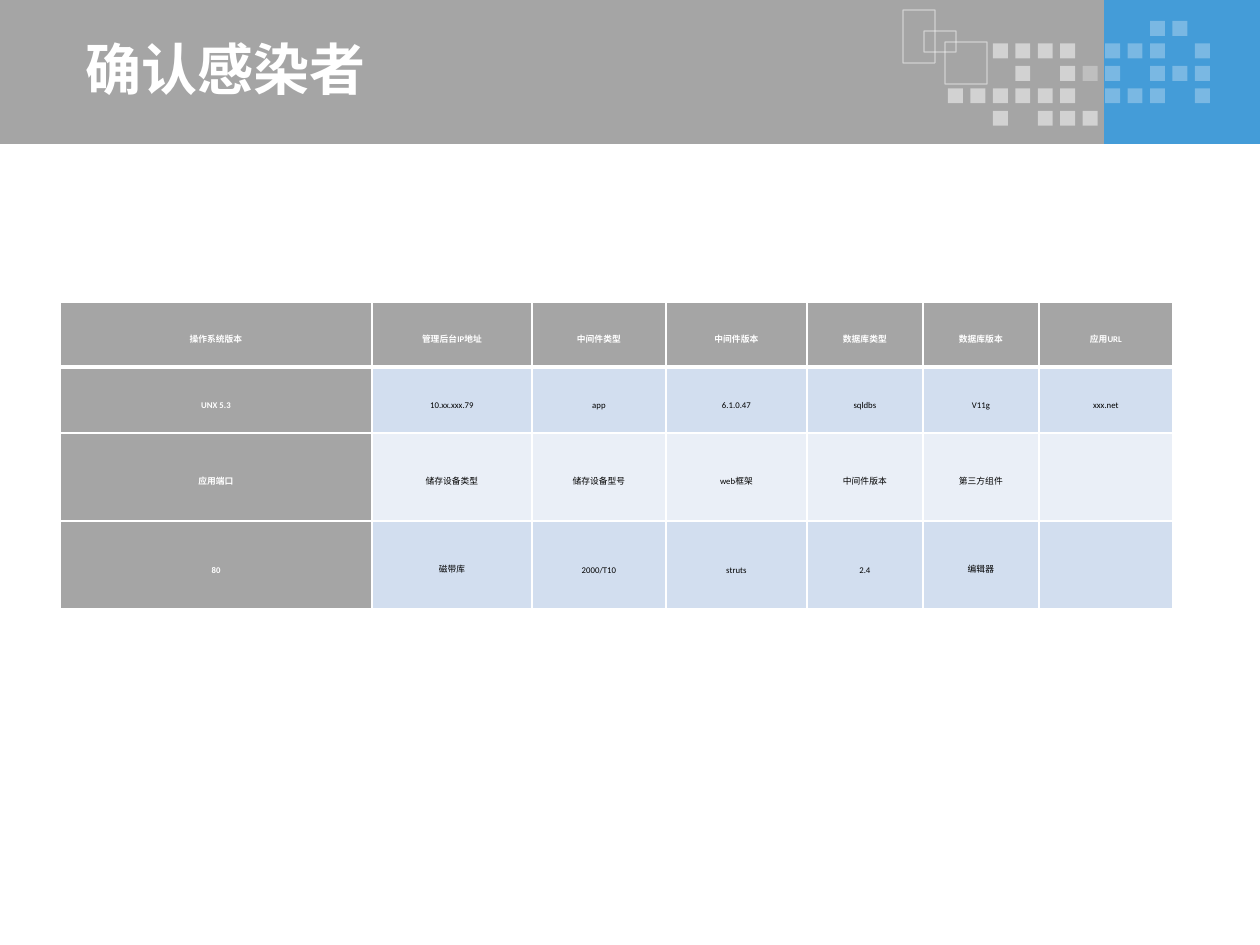
from lxml import etree
from pptx import Presentation
from pptx import util as u
from pptx.dml.color import RGBColor
from pptx.enum import shapes, text
from pptx.oxml import ns

SCALE = 914400 / 126  # EMU in one px
COLORS = {"gray": "A5A5A5", "blue": "449CD8", "white": "FFFFFF", "black": "000000",
          "odd row": "D2DEEF", "even row": "EAEFF7"}
CJK_FONT = "Noto Sans CJK SC"

# Content
TITLE = "确认感染者"
ROWS = [
    ["操作系统版本", "管理后台IP地址", "中间件类型", "中间件版本", "数据库类型", "数据库版本", "应用URL"],
    ["UNX 5.3", "10.xx.xxx.79", "app", "6.1.0.47", "sqldbs", "V11g", "xxx.net"],
    ["应用端口", "储存设备类型", "储存设备型号", "web框架", "中间件版本", "第三方组件", ""],
    ["80", "磁带库", "2000/T10", "struts", "2.4", "编辑器", ""],
]
COLUMN_WIDTHS = [312, 160, 134, 141, 116, 116, 134]
ROW_HEIGHTS = [65, 66, 88, 88]

# Header decoration: "#" is a strong square, "+" a faint one
BANDS = [("blue", 1104, 156), ("gray", 0, 1104)]
BAND_HEIGHT = 144
SQUARES = [
    "         ++ ",
    "  #### +++ +",
    "   # #++ +++",
    "###### +++ +",
    "  # ###     ",
]
ALPHA = {"#": 50, "+": 29}
SQUARE_SIZE, SQUARE_PITCH, SQUARES_LEFT, SQUARES_TOP = 15, 22.45, 948, 21
OUTLINES = [(903, 10, 32, 53), (924, 31, 32, 21), (945, 42, 42, 42)]


def px(length):
    return u.Emu(round(length * SCALE))


def rgb(name):
    return RGBColor.from_string(COLORS[name])


def set_alpha(element, percent):
    color = element.find(".//" + ns.qn("a:srgbClr"))
    etree.SubElement(color, ns.qn("a:alpha"), val=str(percent * 1000))


def write(frame, content, size, color, font, bold=False, align=text.PP_ALIGN.LEFT, spacing=None):
    paragraph = frame.paragraphs[0]
    paragraph.alignment = align
    if spacing:
        paragraph.line_spacing = u.Pt(spacing)
    run = paragraph.add_run()
    run.text = content
    run.font.size, run.font.bold, run.font.name = u.Pt(size), bold, font
    run.font.color.rgb = rgb(color)
    latin = run.font._element.find(ns.qn("a:latin"))
    latin.addnext(latin.makeelement(ns.qn("a:ea"), {"typeface": CJK_FONT}))


def add_box(slide, left, top, width, height, fill=None, line=None, alpha=100):
    shape = slide.shapes.add_shape(shapes.MSO_SHAPE.RECTANGLE, *map(px, (left, top, width, height)))
    shape.shadow.inherit = False
    if fill:
        shape.fill.solid()
        shape.fill.fore_color.rgb = rgb(fill)
    else:
        shape.fill.background()
    if line:
        shape.line.color.rgb = rgb(line)
        shape.line.width = u.Pt(0.75)
    else:
        shape.line.fill.background()
    if alpha < 100:
        set_alpha(shape._element.spPr, alpha)


def set_borders(cell, widths):
    properties = cell._tc.get_or_add_tcPr()
    for index, (side, width) in enumerate(widths.items()):
        line = properties.makeelement(ns.qn("a:ln" + side), {"w": str(u.Pt(width))})
        fill = etree.SubElement(line, ns.qn("a:solidFill"))
        etree.SubElement(fill, ns.qn("a:srgbClr"), val=COLORS["white"])
        properties.insert(index, line)


def add_header(slide):
    for color, left, width in BANDS:
        add_box(slide, left, 0, width, BAND_HEIGHT, fill=color)
    for row, marks in enumerate(SQUARES):
        for column, mark in enumerate(marks):
            if mark in ALPHA:
                add_box(slide, SQUARES_LEFT + column * SQUARE_PITCH, SQUARES_TOP + row * SQUARE_PITCH,
                        SQUARE_SIZE, SQUARE_SIZE, fill="white", alpha=ALPHA[mark])
    for outline in OUTLINES:
        add_box(slide, *outline, line="white", alpha=50)


def add_title(slide):
    title = slide.shapes.title
    title.left, title.top, title.width, title.height = map(px, (73, 35, 978, 67))
    frame = title.text_frame
    frame.auto_size = text.MSO_AUTO_SIZE.NONE
    frame.vertical_anchor = text.MSO_ANCHOR.MIDDLE
    write(frame, TITLE, size=32, color="white", font=CJK_FONT, bold=True)
    slide.shapes._spTree.append(title._element)  # in front of the bands


def add_inventory(slide):
    table = slide.shapes.add_table(len(ROWS), len(COLUMN_WIDTHS), px(60), px(302),
                                   px(sum(COLUMN_WIDTHS)), px(sum(ROW_HEIGHTS))).table
    for column, width in zip(table.columns, COLUMN_WIDTHS):
        column.width = px(width)
    for r, (row, height) in enumerate(zip(ROWS, ROW_HEIGHTS)):
        table.rows[r].height = px(height)
        for c, content in enumerate(row):
            cell = table.cell(r, c)
            heading = r == 0 or c == 0
            cell.vertical_anchor = text.MSO_ANCHOR.MIDDLE
            cell.margin_left = cell.margin_right = px(8)
            cell.margin_top = cell.margin_bottom = 0
            cell.fill.solid()
            cell.fill.fore_color.rgb = rgb("gray" if heading else "odd row" if r % 2 else "even row")
            set_borders(cell, {"L": 1, "R": 1, "T": 3 if r == 1 else 1, "B": 3 if r == 0 else 1})
            if content:
                write(cell.text_frame, content, size=5, color="white" if heading else "black",
                      font="Calibri", bold=heading, align=text.PP_ALIGN.CENTER, spacing=12)


def main():
    presentation = Presentation()
    presentation.slide_width, presentation.slide_height = px(1260), px(945)
    slide = presentation.slides.add_slide(presentation.slide_layouts[5])
    add_header(slide)
    add_title(slide)
    add_inventory(slide)
    presentation.save("out.pptx")


if __name__ == "__main__":
    main()
